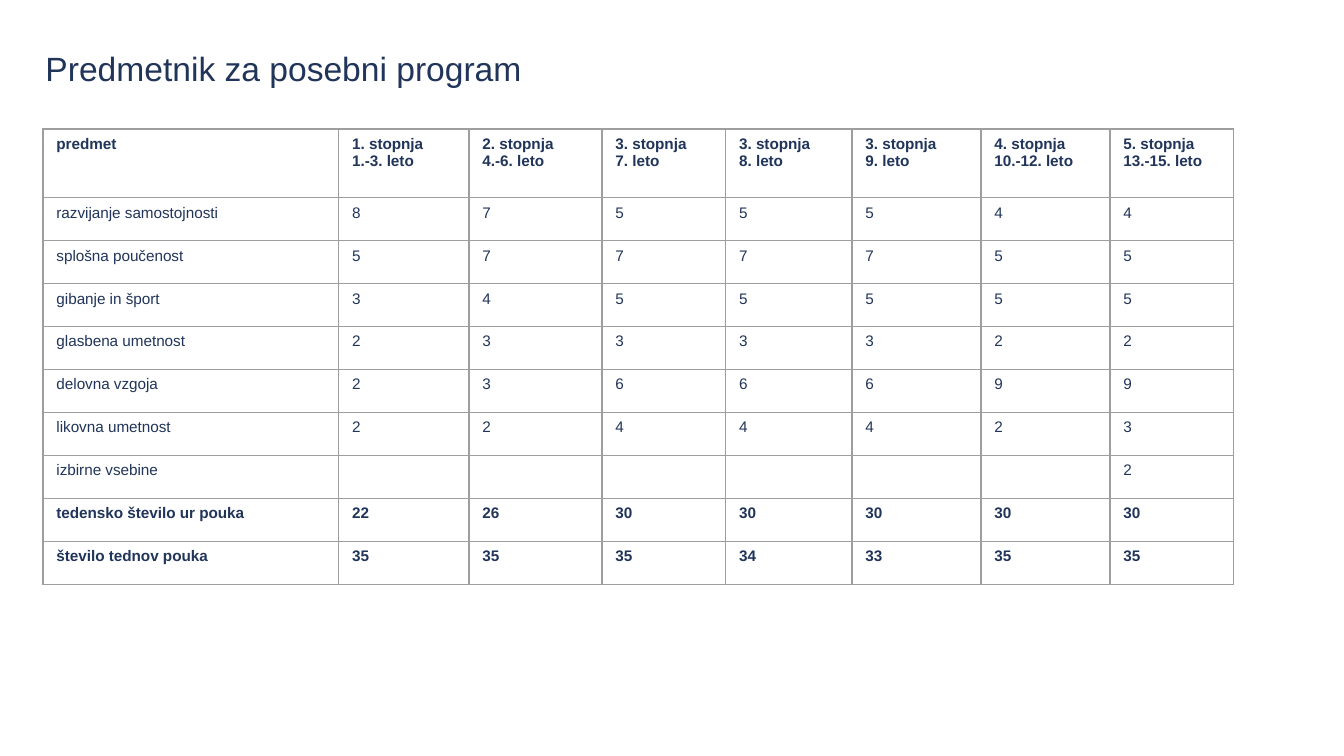
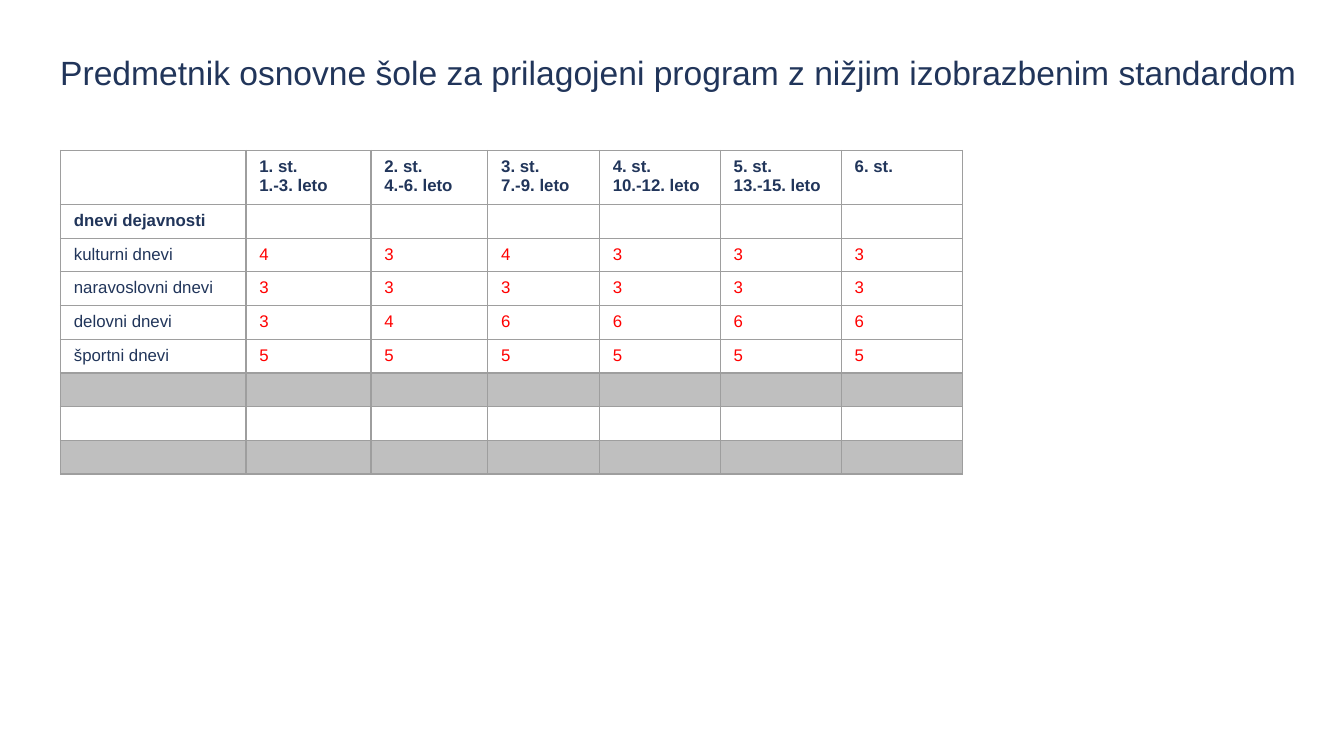
import pptx
import pptx.dml.color
import pptx.oxml
import pptx.oxml.ns
import pptx.util

PX = 9144  # EMU per px, 100 px to the inch
FONT = "Arial"
NAVY = pptx.dml.color.RGBColor(0x21, 0x35, 0x5A)
RED = pptx.dml.color.RGBColor(0xFF, 0x00, 0x00)
GREY = pptx.dml.color.RGBColor(0xBF, 0xBF, 0xBF)
BORDER = pptx.dml.color.RGBColor(0x9E, 0x9E, 0x9E)

PROGRAM_ROWS = [
    ["predmet", "1. stopnja\n1.-3. leto", "2. stopnja\n4.-6. leto",
     "3. stopnja\n7. leto", "3. stopnja\n8. leto", "3. stopnja\n9. leto",
     "4. stopnja\n10.-12. leto", "5. stopnja\n13.-15. leto"],
    ["razvijanje samostojnosti", 8, 7, 5, 5, 5, 4, 4],
    ["splošna poučenost", 5, 7, 7, 7, 7, 5, 5],
    ["gibanje in šport", 3, 4, 5, 5, 5, 5, 5],
    ["glasbena umetnost", 2, 3, 3, 3, 3, 2, 2],
    ["delovna vzgoja", 2, 3, 6, 6, 6, 9, 9],
    ["likovna umetnost", 2, 2, 4, 4, 4, 2, 3],
    ["izbirne vsebine"] + [""] * 6 + [2],
    ["tedensko število ur pouka", 22, 26, 30, 30, 30, 30, 30],
    ["število tednov pouka", 35, 35, 35, 34, 33, 35, 35],
]
EMPTY_ROW = [""] * 7
ACTIVITY_ROWS = [
    ["", "1. st.\n1.-3. leto", "2. st.\n4.-6. leto", "3. st.\n7.-9. leto",
     "4. st.\n10.-12. leto", "5. st.\n13.-15. leto", "6. st."],
    ["dnevi dejavnosti"] + [""] * 6,
    ["kulturni dnevi", 4, 3, 4, 3, 3, 3],
    ["naravoslovni dnevi", 3, 3, 3, 3, 3, 3],
    ["delovni dnevi", 3, 4, 6, 6, 6, 6],
    ["športni dnevi", 5, 5, 5, 5, 5, 5],
    EMPTY_ROW, EMPTY_ROW, EMPTY_ROW,
]


def px(n):
    return pptx.util.Emu(n * PX)


def style(p, size, color=NAVY, bold=False):
    p.font.name = FONT
    p.font.size = pptx.util.Pt(size)
    p.font.bold = bold
    p.font.color.rgb = color


def add_title(s, text, left, top):
    tf = s.shapes.add_textbox(px(left), px(top), px(994), px(50)).text_frame
    tf.word_wrap = True
    tf.margin_top = px(8)
    tf.text = text
    style(tf.paragraphs[0], 18)


def add_borders(cell):
    tc_pr = cell._tc.get_or_add_tcPr()
    for i, side in enumerate("LRTB"):
        tc_pr.insert(i, pptx.oxml.parse_xml(
            f'<a:ln{side} {pptx.oxml.ns.nsdecls("a")} w="9525"><a:solidFill>'
            f'<a:srgbClr val="{BORDER}"/></a:solidFill></a:ln{side}>'))


def fill_cell(cell, value, size, color, bold, fill):
    cell.text = str(value)
    for p in cell.text_frame.paragraphs:
        style(p, size, color, bold)
        if not p.runs:  # keeps the line height of an empty cell
            p._p.append(pptx.oxml.parse_xml(
                f'<a:endParaRPr {pptx.oxml.ns.nsdecls("a")} sz="{int(size * 100)}"/>'))
    if fill is None:
        cell.fill.background()
    else:
        cell.fill.solid()
        cell.fill.fore_color.rgb = fill
    add_borders(cell)


def add_grid(s, rows, left, top, widths, head_height, row_height, size,
             bold_rows, grey_rows=(), number_color=NAVY):
    heights = [head_height] + [row_height] * (len(rows) - 1)
    table = s.shapes.add_table(len(rows), len(widths), px(left), px(top),
                               px(sum(widths)), px(sum(heights))).table
    table.first_row = table.horz_banding = False
    for col, width in zip(table.columns, widths):
        col.width = px(width)
    for i, (values, height) in enumerate(zip(rows, heights)):
        table.rows[i].height = px(height)
        for j, value in enumerate(values):
            color = number_color if isinstance(value, int) else NAVY
            fill_cell(table.cell(i, j), value, size, color, i in bold_rows,
                      GREY if i in grey_rows else None)


def main():
    prs = pptx.Presentation()
    prs.slide_width, prs.slide_height = px(1000), pptx.util.Inches(5.625)
    blank = prs.slide_layouts[6]

    s = prs.slides.add_slide(blank)
    add_title(s, "Predmetnik za posebni program", 24, 28)
    add_grid(s, PROGRAM_ROWS, 32, 96, [220, 97, 99, 92, 94, 96, 96, 92],
             51, 32, 8.2, bold_rows=(0, 8, 9))

    s = prs.slides.add_slide(blank)
    add_grid(s, ACTIVITY_ROWS, 45, 112, [138, 93, 87, 83, 90, 90, 90],
             38, 24, 9, bold_rows=(0, 1), grey_rows=(6, 8), number_color=RED)
    add_title(s, "Predmetnik osnovne šole za prilagojeni program "
                 "z nižjim izobrazbenim standardom", 35, 31)
    prs.save("out.pptx")


if __name__ == "__main__":
    main()
